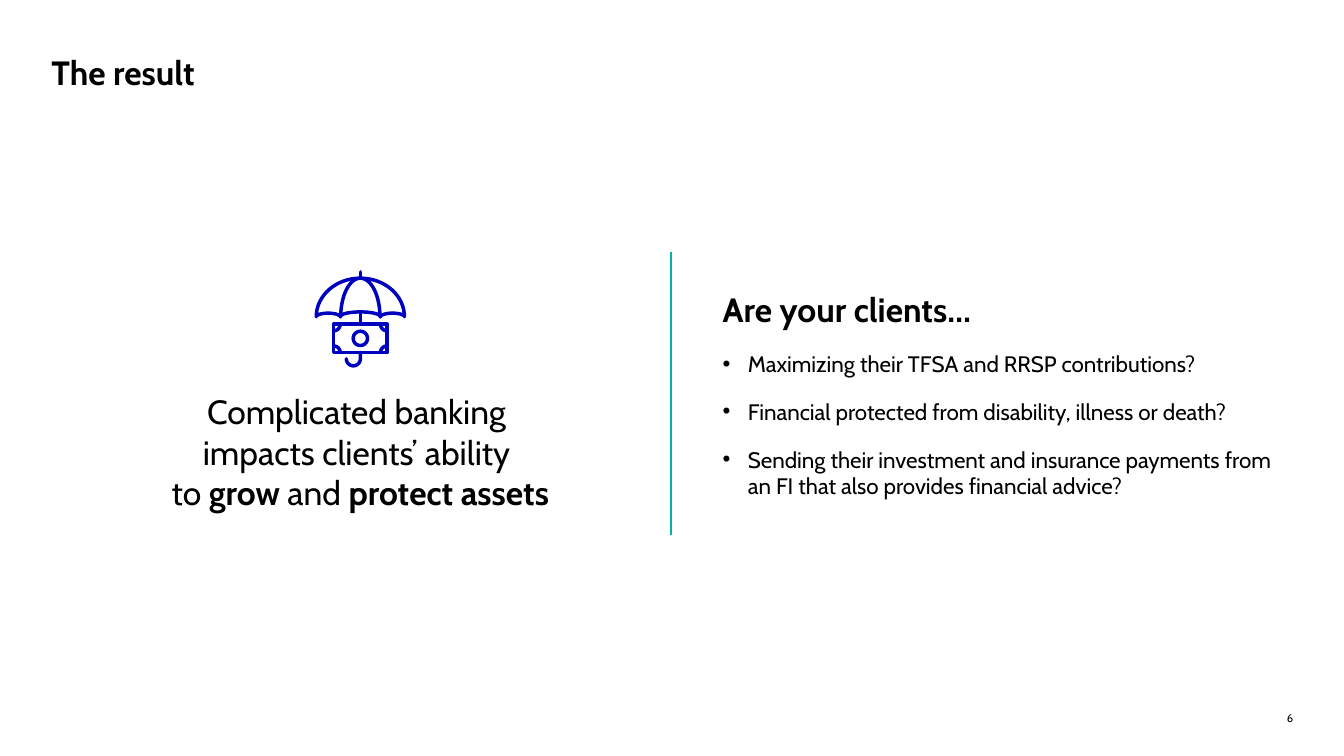
import math
from dataclasses import dataclass

from lxml import etree
from pptx import Presentation
from pptx import util as u
from pptx.dml.color import RGBColor
from pptx.enum import shapes, text
from pptx.oxml.ns import qn

COLOURS = {"ink": "000000", "paper": "FFFFFF", "divider": "05B2A7", "icon": "0000C1"}
FONT = "Cabin"
Point = tuple[float, float]


@dataclass(frozen=True)
class Box:
    left: float
    top: float
    width: float
    height: float


@dataclass(frozen=True)
class Phrase:
    words: str
    bold: bool = False


@dataclass(frozen=True)
class Stroke:
    points: list[Point]
    closed: bool = False


TITLE = Box(36.7, 37.4, 888, 62.6)
QUESTIONS = Box(516.2, 185, 401, 193)
STATEMENT = Box(35.3, 275.8, 444.2, 94.3)
PAGE_NUMBER = Box(901.4, 504, 22.3, 13.7)
DIVIDER_X, DIVIDER_TOP, DIVIDER_BOTTOM = 479.5, 180, 382.3
ICON_X = 257.4

CLIENT_QUESTIONS = [
    "Maximizing their TFSA and RRSP contributions?",
    "Financial protected from disability, illness or death?",
    "Sending their investment and insurance payments from an FI that also provides financial advice?",
]
STATEMENT_PHRASES = [
    Phrase("Complicated banking \nimpacts clients’ ability \nto "),
    Phrase("grow", bold=True),
    Phrase(" and "),
    Phrase("protect assets", bold=True),
]


def colour(name: str) -> RGBColor:
    return RGBColor.from_string(COLOURS[name])


def place(shape, box: Box) -> None:
    shape.left, shape.top = u.Pt(box.left), u.Pt(box.top)
    shape.width, shape.height = u.Pt(box.width), u.Pt(box.height)


def prepare_frame(shape, anchor, margin: float | None = 0, auto_size=text.MSO_AUTO_SIZE.NONE):
    """Set wrapping, anchor and margins; a margin of None keeps the default."""
    frame = shape.text_frame
    frame.word_wrap = True
    frame.auto_size = auto_size
    frame.vertical_anchor = anchor
    if margin is not None:
        frame.margin_left = frame.margin_right = u.Pt(margin)
        frame.margin_top = frame.margin_bottom = u.Pt(margin)
    return frame


def write(paragraph, words: str, *, size: float, bold: bool = False,
          align=text.PP_ALIGN.LEFT, before: float = 0) -> None:
    """Append words to the paragraph, turning newlines into line breaks."""
    paragraph.alignment = align
    paragraph.space_before = u.Pt(before)
    for number, line in enumerate(words.split("\n")):
        if number:
            paragraph.add_line_break()
        run = paragraph.add_run()
        run.text = line
        run.font.name, run.font.size, run.font.bold = FONT, u.Pt(size), bold
        run.font.color.rgb = colour("ink")


def set_bullet(paragraph, character: str = "", indent: float = 0) -> None:
    """Give the paragraph a hanging bullet, or none if character is empty."""
    properties = paragraph._p.get_or_add_pPr()
    properties.set("marL", str(u.Pt(indent)))
    properties.set("indent", str(-u.Pt(indent)))
    if not character:
        etree.SubElement(properties, qn("a:buNone"))
        return
    bullet_colour = etree.SubElement(properties, qn("a:buClr"))
    etree.SubElement(bullet_colour, qn("a:srgbClr"), val=COLOURS["ink"])
    etree.SubElement(properties, qn("a:buFont"), typeface="Arial")
    etree.SubElement(properties, qn("a:buChar"), char=character)


def arc(x: float, y: float, radius_x: float, radius_y: float,
        start: float, end: float, steps: int = 32) -> list[Point]:
    """Sample an elliptical arc; angles in degrees, clockwise from the right."""
    angles = [math.radians(start + (end - start) * step / steps) for step in range(steps + 1)]
    return [(x + radius_x * math.cos(a), y + radius_y * math.sin(a)) for a in angles]


def umbrella_strokes() -> list[Stroke]:
    """Umbrella over a banknote, centred on x = 0."""
    rim, crown, rib, edge = 226.3, 198.7, 14.5, 31.5
    half_note, note_top, note_bottom = 19.1, 231.6, 251.8
    side = (edge - rib) / 2
    canopy = arc(0, rim, edge, rim - crown, 180, 360)
    canopy += arc(rib + side, rim, side, 2.6, 0, -180)
    canopy += arc(0, rim, rib, 3.5, 0, -180)
    canopy += arc(-rib - side, rim, side, 2.6, 0, -180)
    note = [(-half_note, note_top), (half_note, note_top),
            (half_note, note_bottom), (-half_note, note_bottom)]
    strokes = [
        Stroke(canopy, closed=True),
        Stroke(arc(0, rim, rib - 0.5, rim - crown, 180, 360)),
        Stroke([(0, 194.2), (0, crown)]),
        Stroke([(0, rim - 3.5), (0, note_top)]),
        Stroke(note, closed=True),
        Stroke(arc(0, 241.7, 5.1, 5.1, 0, 360), closed=True),
        Stroke([(0, note_bottom)] + arc(-5, 256.3, 5, 5, 0, 180)),
    ]
    for quarter, (x, y) in enumerate(note):
        strokes.append(Stroke(arc(x, y, 4.7, 4.7, 90 * quarter, 90 * quarter + 90)))
    return strokes


def draw_icon(slide) -> None:
    strokes = umbrella_strokes()
    builder = None
    for stroke in strokes:
        start, *rest = [(u.Pt(ICON_X + x), u.Pt(y)) for x, y in stroke.points]
        if builder is None:
            builder = slide.shapes.build_freeform(*start)
        else:
            builder.move_to(*start)
        builder.add_line_segments(rest, close=stroke.closed)
    icon = builder.convert_to_shape()
    icon.shadow.inherit = False
    icon.fill.background()
    icon.line.color.rgb = colour("icon")
    icon.line.width = u.Pt(2.5)
    icon.line._get_or_add_ln().set("cap", "rnd")


def draw_divider(slide) -> None:
    divider = slide.shapes.add_connector(
        shapes.MSO_CONNECTOR.STRAIGHT, u.Pt(DIVIDER_X), u.Pt(DIVIDER_TOP),
        u.Pt(DIVIDER_X), u.Pt(DIVIDER_BOTTOM))
    divider.line.color.rgb = colour("divider")
    divider.line.width = u.Pt(1.5)
    etree.SubElement(divider._element.spPr, qn("a:effectLst"))


def add_text_box(slide, box: Box):
    return slide.shapes.add_textbox(
        u.Pt(box.left), u.Pt(box.top), u.Pt(box.width), u.Pt(box.height))


def main() -> None:
    presentation = Presentation()
    presentation.slide_width, presentation.slide_height = u.Pt(960), u.Pt(540)
    slide = presentation.slides.add_slide(presentation.slide_layouts[1])
    slide.background.fill.solid()
    slide.background.fill.fore_color.rgb = colour("paper")

    title, questions = slide.shapes.title, slide.placeholders[1]
    place(title, TITLE)
    frame = prepare_frame(title, text.MSO_ANCHOR.TOP)
    write(frame.paragraphs[0], "The result", size=24, bold=True)

    place(questions, QUESTIONS)
    frame = prepare_frame(questions, text.MSO_ANCHOR.MIDDLE)
    heading = frame.paragraphs[0]
    set_bullet(heading)
    write(heading, "Are your clients…", size=24, bold=True)
    for question in CLIENT_QUESTIONS:
        paragraph = frame.add_paragraph()
        set_bullet(paragraph, "•", indent=18)
        write(paragraph, question, size=16, before=15)

    frame = prepare_frame(add_text_box(slide, PAGE_NUMBER), text.MSO_ANCHOR.BOTTOM)
    write(frame.paragraphs[0], "6", size=8, align=text.PP_ALIGN.RIGHT)

    draw_divider(slide)

    frame = prepare_frame(add_text_box(slide, STATEMENT), text.MSO_ANCHOR.TOP, margin=None,
                          auto_size=text.MSO_AUTO_SIZE.SHAPE_TO_FIT_TEXT)
    for phrase in STATEMENT_PHRASES:
        write(frame.paragraphs[0], phrase.words, size=24, bold=phrase.bold,
              align=text.PP_ALIGN.CENTER)

    draw_icon(slide)
    presentation.save("out.pptx")


if __name__ == "__main__":
    main()
